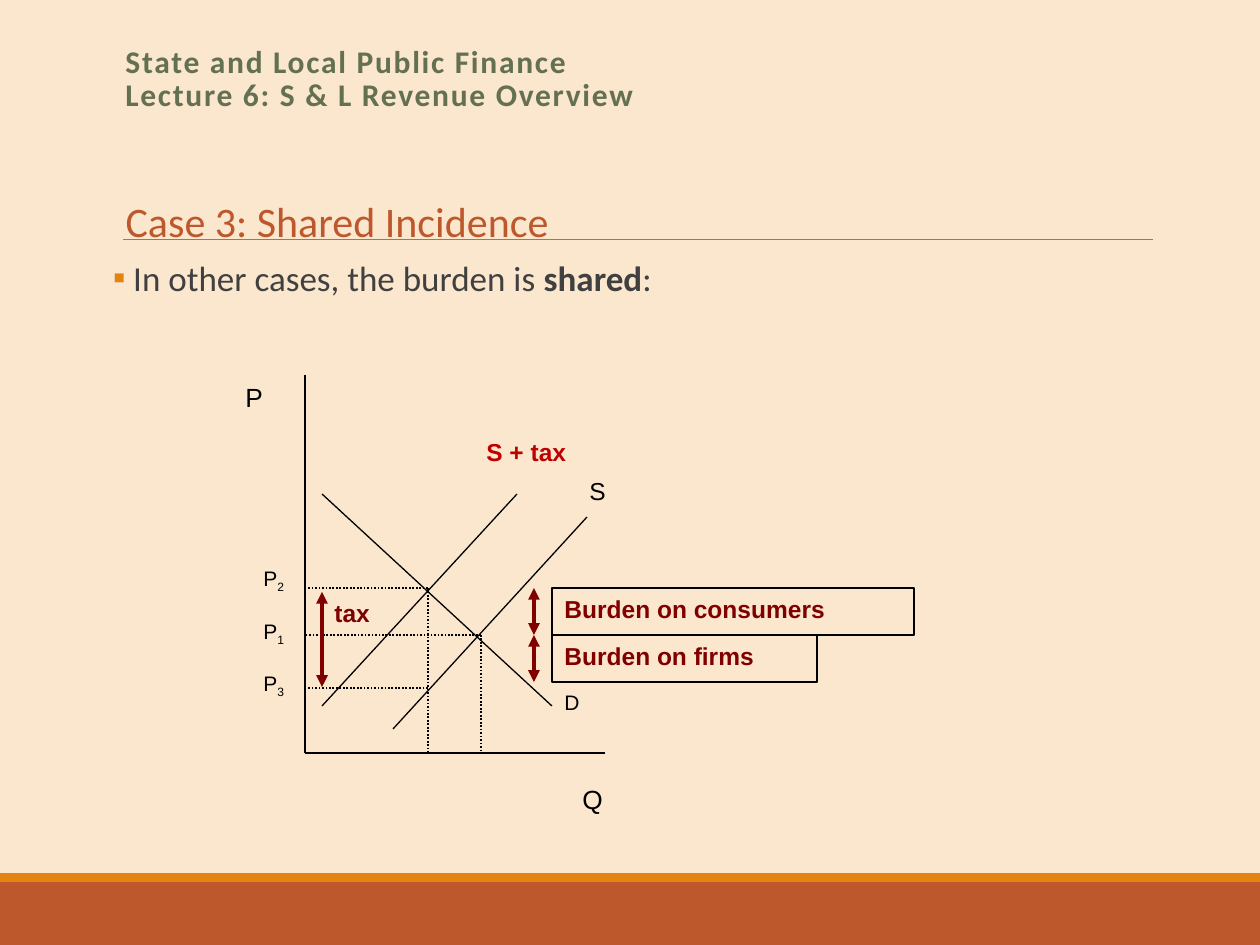
from pptx import Presentation
from pptx.dml.color import RGBColor
from pptx.enum.dml import MSO_LINE
from pptx.enum.shapes import MSO_CONNECTOR, MSO_SHAPE
from pptx.enum.text import MSO_ANCHOR, MSO_AUTO_SIZE, PP_ALIGN
from pptx.oxml import parse_xml
from pptx.oxml.ns import nsdecls, qn
from pptx.util import Pt
from lxml import etree

STRAIGHT, RECT = MSO_CONNECTOR.STRAIGHT, MSO_SHAPE.RECTANGLE
TOP, LEFT, DOTTED = MSO_ANCHOR.TOP, PP_ALIGN.LEFT, MSO_LINE.ROUND_DOT
GROW, FIXED = MSO_AUTO_SIZE.SHAPE_TO_FIT_TEXT, MSO_AUTO_SIZE.NONE
SCALE = 914400 / 126  # EMU per px


class Theme:
    paper, rust, orange, green = "FBE6CE", "BD582C", "E48312", "637052"
    gray, body, black = "808080", "404040", "000000"
    maroon, red = "800000", "C00000"
    heading, text, header, axis, curve, price = 24, 20, 18, 15, 14, 12
    sans, diagram = "Calibri", "Arial"
    hairline, thin, dotted, thick = 0.5, 0.75, 1, 2.25


def write(para, text, size, color, font=Theme.diagram, bold=False):
    span = para.add_run()
    span.text = text
    span.font.size, span.font.name, span.font.bold = Pt(size), font, bold
    span.font.color.rgb = RGBColor.from_string(color)
    return span


def draw_line(page, ends, color=Theme.black, width=Theme.thin, dash=None, arrows=False):
    line = page.shapes.add_connector(STRAIGHT, *[round(v * SCALE) for v in ends])
    line.line.color.rgb = RGBColor.from_string(color)
    line.line.width = Pt(width)
    if dash:
        line.line.dash_style = dash
    if arrows:
        for end in ("a:headEnd", "a:tailEnd"):
            etree.SubElement(line.line._get_or_add_ln(), qn(end), type="triangle")
    etree.SubElement(line._element.spPr, qn("a:effectLst"))


deck = Presentation()
deck.slide_width, deck.slide_height = round(1260 * SCALE), round(945 * SCALE)
page = deck.slides.add_slide(deck.slide_layouts[5])
page.background.fill.solid()
page.background.fill.fore_color.rgb = RGBColor.from_string(Theme.paper)

# Footer bars and title rule
for top, height, color in [(882, 63, Theme.rust), (873, 9, Theme.orange)]:
    bar = page.shapes.add_shape(RECT, 0, round(top * SCALE), deck.slide_width, round(height * SCALE))
    bar.shadow.inherit = False
    bar.fill.solid()
    bar.fill.fore_color.rgb = RGBColor.from_string(color)
    bar.line.fill.background()
draw_line(page, (123, 239, 1153, 239), Theme.gray, Theme.hairline)

# Lecture header
header = page.shapes.add_textbox(*[round(v * SCALE) for v in (113, 42, 1040, 82)])
header.text_frame.word_wrap = True
para = header.text_frame.paragraphs[0]
para.line_spacing = 0.85
for number, text in enumerate(["State and Local Public Finance", "Lecture 6: S & L Revenue Overview"]):
    if number:
        para.add_line_break()
    span = write(para, text, Theme.header, Theme.green, Theme.sans, True)
    span.font._element.set("spc", "100")

# Title
title = page.shapes.title
title.left, title.top, title.width, title.height = [round(v * SCALE) for v in (113, 189, 460, 63)]
frame = title.text_frame
frame.word_wrap, frame.auto_size, frame.vertical_anchor = False, GROW, TOP
frame.paragraphs[0].alignment = LEFT
write(frame.paragraphs[0], "Case 3: Shared Incidence", Theme.heading, Theme.rust, Theme.sans)

# Bullet text
body = page.shapes.add_textbox(*[round(v * SCALE) for v in (113, 255, 1040, 554)])
frame = body.text_frame
frame.word_wrap, frame.margin_left, frame.margin_right = True, 0, 0
para = frame.paragraphs[0]
para.line_spacing, para.space_before, para.space_after = 0.9, Pt(6.8), Pt(1.1)
properties = para._p.get_or_add_pPr()
indent = round(8 * SCALE)
properties.set("marL", str(indent))
properties.set("indent", str(-indent))
properties.append(parse_xml(f'<a:buClr {nsdecls("a")}><a:srgbClr val="{Theme.orange}"/></a:buClr>'))
etree.SubElement(properties, qn("a:buFont"), typeface=Theme.sans)
etree.SubElement(properties, qn("a:buChar"), char="▪")
for text, bold in [(" In other cases, the burden is ", False), ("shared", True), (":", False)]:
    write(para, text, Theme.text, Theme.body, Theme.sans, bold)

# Axes, demand and the two supply curves
axis_x, axis_y = 305, 753
for ends in [
    (axis_x, 375, axis_x, axis_y),
    (axis_x, axis_y, 605, axis_y),
    (322, 494, 552, 706),
    (322, 706, 517, 494),
    (393, 729, 587, 517),
]:
    draw_line(page, ends)

# Dotted guides at the prices and quantities
taxed_q, free_q = 428, 481
price_2, price_1, price_3 = 588, 635, 688
for quantity, price in [(taxed_q, price_2), (free_q, price_1), (taxed_q, price_3)]:
    draw_line(page, (quantity, price, axis_x, price), width=Theme.dotted, dash=DOTTED)
for quantity, price in [(taxed_q, price_2), (free_q, price_1)]:
    draw_line(page, (quantity, price, quantity, axis_y), width=Theme.dotted, dash=DOTTED)

# Diagram labels: text, subscript, place, size, colour, bold
for text, subscript, place, size, color, bold in [
    ("P", "", (233, 375, 53, 95), Theme.axis, Theme.black, False),
    ("Q", "", (570, 777, 53, 95), Theme.axis, Theme.black, False),
    ("S", "", (577, 470, 81, 71), Theme.curve, Theme.black, False),
    ("S + tax", "", (474, 431, 123, 71), Theme.curve, Theme.red, True),
    ("D", "", (552, 683, 88, 71), Theme.price, Theme.black, False),
    ("P", "1", (251, 612, 71, 71), Theme.price, Theme.black, False),
    ("P", "2", (251, 559, 71, 71), Theme.price, Theme.black, False),
    ("P", "3", (251, 664, 71, 71), Theme.price, Theme.black, False),
    ("tax", "", (322, 592, 71, 86), Theme.curve, Theme.maroon, True),
]:
    label = page.shapes.add_textbox(*[round(v * SCALE) for v in place])
    label.text_frame.word_wrap = True
    para = label.text_frame.paragraphs[0]
    write(para, text, size, color, bold=bold)
    if subscript:
        span = write(para, subscript, size, color)
        span.font._element.set("baseline", "-25000")

# Burden boxes
burden_height = price_1 - price_2
for text, top, width in [("Burden on consumers", price_2, 362), ("Burden on firms", price_1, 265)]:
    box = page.shapes.add_shape(RECT, *[round(v * SCALE) for v in (552, top, width, burden_height)])
    box.shadow.inherit = False
    box.fill.solid()
    box.fill.fore_color.rgb = RGBColor.from_string(Theme.paper)
    box.line.color.rgb = RGBColor.from_string(Theme.black)
    box.line.width = Pt(Theme.thin)
    frame = box.text_frame
    frame.word_wrap, frame.auto_size, frame.vertical_anchor = True, FIXED, TOP
    frame.paragraphs[0].alignment = LEFT
    write(frame.paragraphs[0], text, Theme.curve, Theme.maroon, bold=True)

# Tax and burden arrows
for x, top, bottom in [
    (322, 592, 687),
    (534, price_2, price_1),
    (534, price_1, price_1 + burden_height),
]:
    draw_line(page, (x, top, x, bottom), Theme.maroon, Theme.thick, arrows=True)

deck.save("out.pptx")
